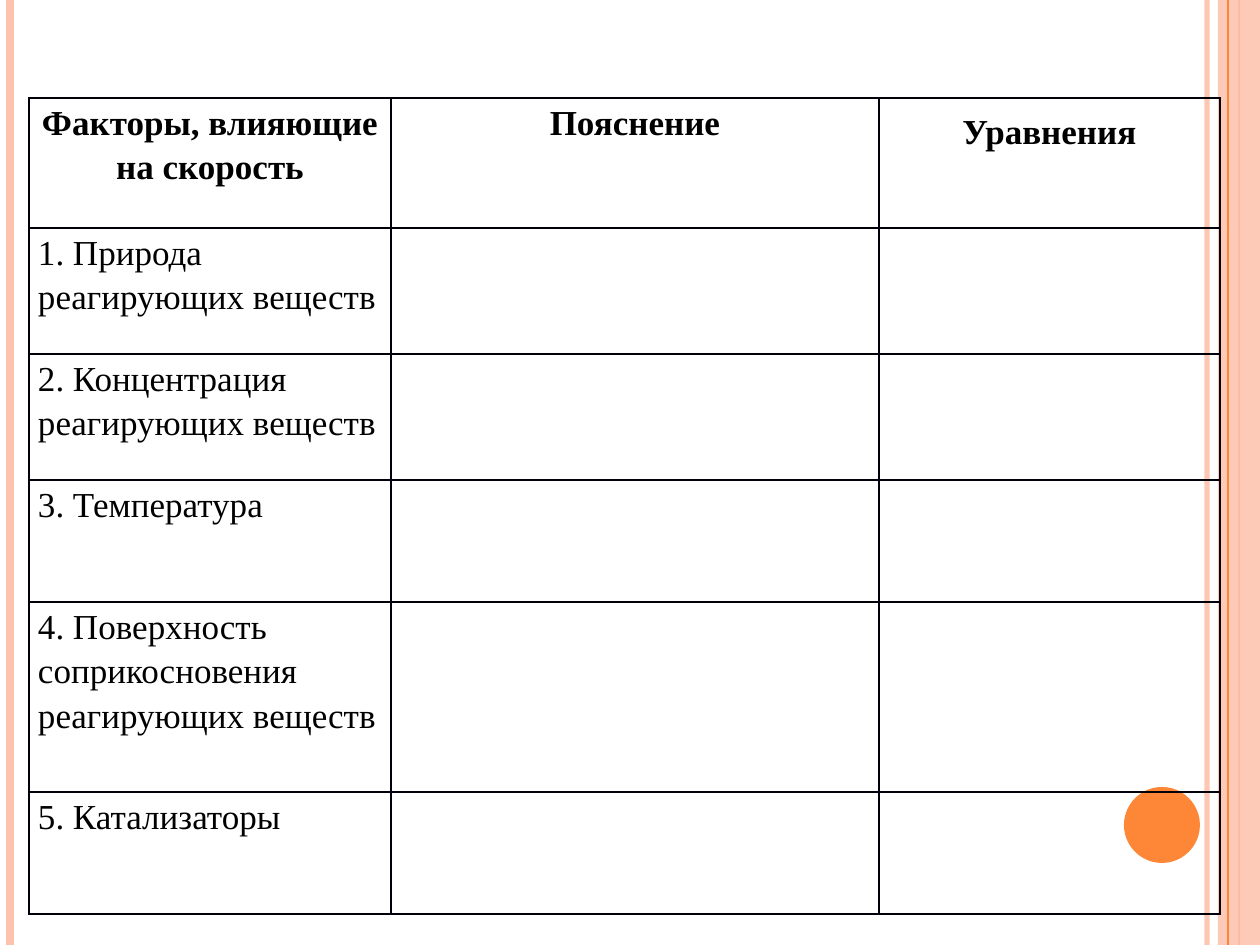
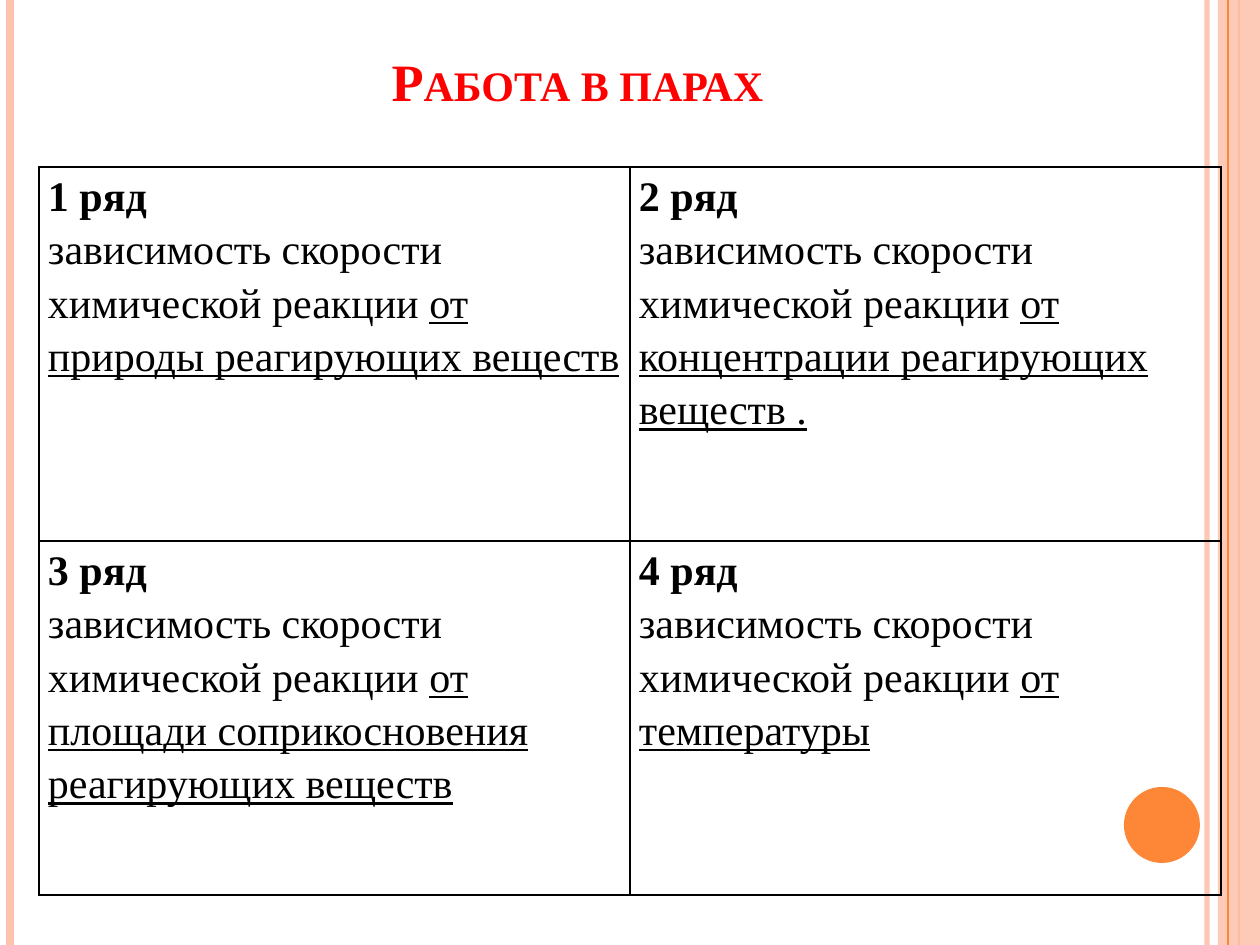
from pptx import Presentation
from pptx import util as u
from pptx.dml import color
from pptx.enum import shapes, text
from pptx.oxml import ns, xmlchemy

PX = 914400 / 126  # EMU in one pixel
WIDTH, HEIGHT = 1260, 945
COLORS = {
    "pale": "FEC3AE",
    "orange": "FE8637",
    "title": "FF0000",
    "text": "000000",
    "border": "00000A",
}
FONT = "Times New Roman"
CENTER = text.PP_ALIGN.CENTER
LEFT = text.PP_ALIGN.LEFT

FACTOR_HEADS = ["Факторы, влияющие на скорость", "Пояснение", "Уравнения"]
FACTORS = [
    "Природа реагирующих веществ",
    "Концентрация реагирующих веществ",
    "Температура",
    "Поверхность соприкосновения реагирующих веществ",
    "Катализаторы",
]
TASK = "зависимость скорости химической реакции "
TASK_ENDS = [
    "от природы реагирующих веществ",
    "от концентрации реагирующих веществ .",
    "от площади соприкосновения реагирующих веществ",
    "от температуры",
]


def px(n):
    return u.Emu(round(n * PX))


def rgb(name):
    return color.RGBColor.from_string(COLORS[name])


def sub(parent, tag, **attrs):
    el = xmlchemy.OxmlElement(tag)
    for key, value in attrs.items():
        el.set(key, str(value))
    parent.append(el)
    return el


def set_alpha(sp, percent):
    clr = sp._element.spPr.find(".//" + ns.qn("a:srgbClr"))
    sub(clr, "a:alpha", val=percent * 1000)


# Shared decoration

def add_stripe(s, x, name, width, alpha=None):
    line = s.shapes.add_connector(
        shapes.MSO_CONNECTOR.STRAIGHT, px(x), 0, px(x), px(HEIGHT))
    line.line.color.rgb = rgb(name)
    line.line.width = u.Pt(width)
    if alpha:
        set_alpha(line, alpha)
    sub(line._element.spPr, "a:effectLst")


def add_filled(s, kind, box, name, alpha=None):
    sp = s.shapes.add_shape(kind, *map(px, box))
    sp.shadow.inherit = False
    sp.fill.solid()
    sp.fill.fore_color.rgb = rgb(name)
    sp.line.fill.background()
    if alpha:
        set_alpha(sp, alpha)


def add_base_slide(prs):
    s = prs.slides.add_slide(prs.slide_layouts[6])
    add_stripe(s, 1207, "pale", 3, alpha=93)
    add_stripe(s, 10, "pale", 4.5)
    add_stripe(s, 1239, "orange", 1.5)
    add_filled(s, shapes.MSO_SHAPE.RECTANGLE, (1218, 0, 42, HEIGHT), "pale", alpha=87)
    add_stripe(s, 1228, "orange", 0.75)
    add_filled(s, shapes.MSO_SHAPE.OVAL, (1124, 787, 76, 76), "orange")
    return s


# Text

def add_run(p, words, size, name="text", **formats):
    r = p.add_run()
    r.text = words
    r.font.color.rgb = rgb(name)
    values = {"name": FONT, "size": u.Pt(size), "bold": False} | formats
    for key, value in values.items():
        setattr(r.font, key, value)
    return r


def format_paragraph(p, align=LEFT, after=0):
    values = {"alignment": align, "line_spacing": 1.15, "space_after": u.Pt(after)}
    for key, value in values.items():
        setattr(p, key, value)
    return p


def add_title(s, words):
    tf = s.shapes.add_textbox(px(63), px(38), px(1029), px(80)).text_frame
    tf.word_wrap = True
    tf.vertical_anchor = text.MSO_ANCHOR.BOTTOM
    p = tf.paragraphs[0]
    p.alignment = CENTER
    r = add_run(p, words, 30, "title", bold=True)
    r.font._element.set("cap", "small")


# Tables

def set_margins(cell, side, vertical=0):
    values = {"left": side, "right": side, "top": vertical, "bottom": vertical}
    for key, value in values.items():
        setattr(cell, "margin_" + key, px(value))


def add_borders(cell, name):
    cell.fill.background()
    tcPr = cell._tc.get_or_add_tcPr()
    for i, edge in enumerate("LRTB"):
        ln = sub(tcPr, "a:ln" + edge, w=u.Pt(1))
        sub(sub(ln, "a:solidFill"), "a:srgbClr", val=COLORS[name])
        tcPr.insert(i, ln)  # borders come before the fill


def add_grid(s, left, top, cols, rows, border):
    box = map(px, (left, top, sum(cols), sum(rows)))
    table = s.shapes.add_table(len(rows), len(cols), *box).table
    table.first_row = table.horz_banding = False
    for col, width in zip(table.columns, cols):
        col.width = px(width)
    for row, height in zip(table.rows, rows):
        row.height = px(height)
    for cell in table.iter_cells():
        set_margins(cell, 9)
        add_borders(cell, border)
    return table


def fill_factor(cell, words, align=LEFT, bold=False):
    p = format_paragraph(cell.text_frame.paragraphs[0], align, 7.5)
    add_run(p, words, 20, bold=bold)


def fill_task(cell, number, ending):
    tf = cell.text_frame
    head = format_paragraph(tf.paragraphs[0])
    add_run(head, f"{number} ряд", 24, bold=True)
    p = format_paragraph(tf.add_paragraph())
    add_run(p, TASK, 24)
    add_run(p, ending, 24, underline=True)


# Slides

def build_factors(prs):
    s = add_base_slide(prs)
    table = add_grid(s, 29, 98, [362, 488, 341],
                     [130, 126, 126, 122, 190, 122], "border")
    for col, words in enumerate(FACTOR_HEADS):
        fill_factor(table.cell(0, col), words, CENTER, bold=True)
    set_margins(table.cell(0, 2), 9, 9)
    for row, words in enumerate(FACTORS, 1):
        fill_factor(table.cell(row, 0), f"{row}. {words}")


def build_pair_work(prs):
    s = add_base_slide(prs)
    add_title(s, "Работа в парах")
    table = add_grid(s, 39, 167, [591, 591], [374, 354], "text")
    for number, (cell, ending) in enumerate(zip(table.iter_cells(), TASK_ENDS), 1):
        fill_task(cell, number, ending)


def main():
    prs = Presentation()
    prs.slide_width, prs.slide_height = px(WIDTH), px(HEIGHT)
    build_factors(prs)
    build_pair_work(prs)
    prs.save("out.pptx")


if __name__ == "__main__":
    main()
